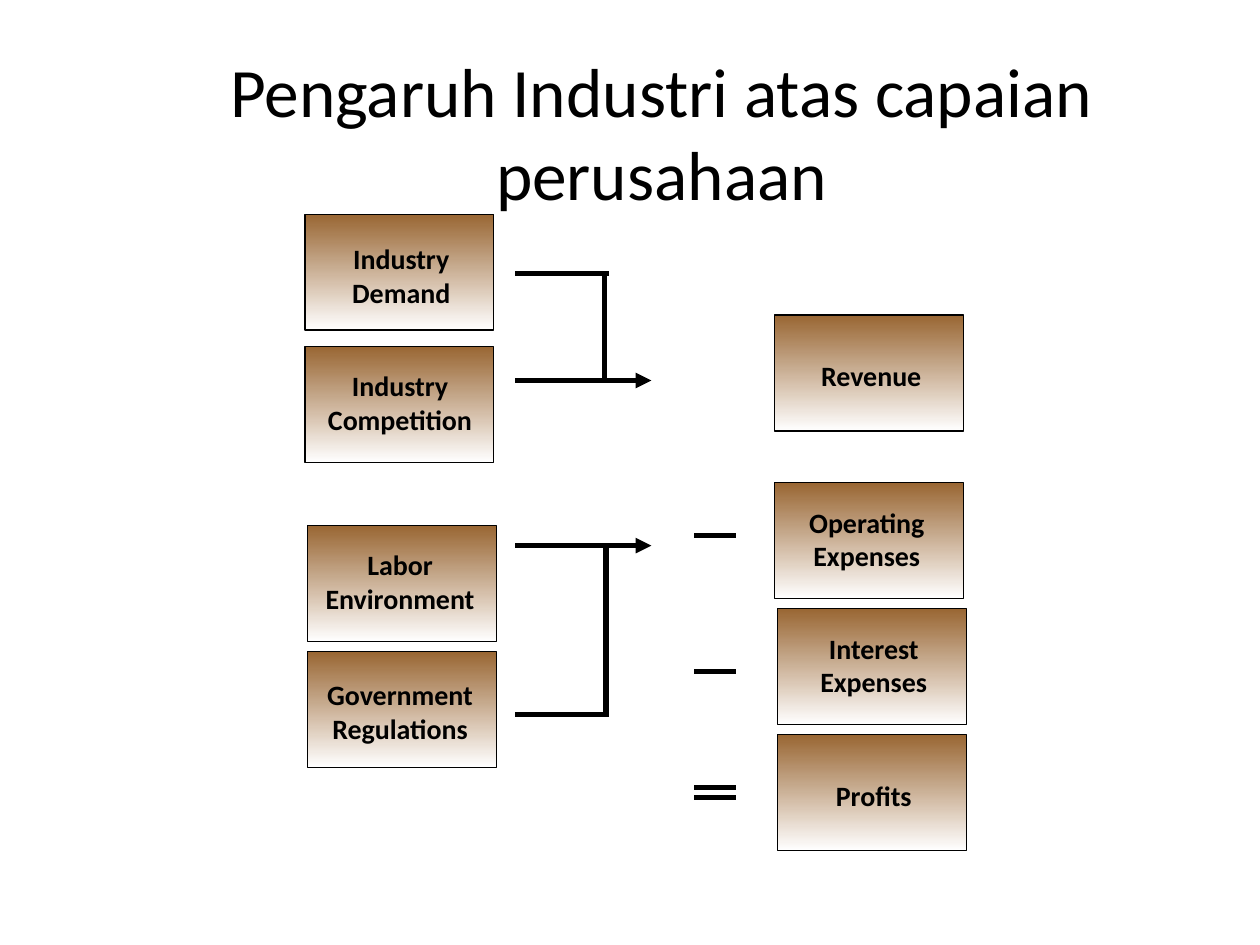
from dataclasses import dataclass

from lxml import etree
from pptx import Presentation
from pptx.dml.color import RGBColor
from pptx.enum.shapes import MSO_CONNECTOR, MSO_SHAPE
from pptx.enum.text import MSO_ANCHOR, MSO_AUTO_SIZE, PP_ALIGN
from pptx.oxml.ns import qn
from pptx.util import Inches, Pt

STRAIGHT = MSO_CONNECTOR.STRAIGHT
RECTANGLE = MSO_SHAPE.RECTANGLE
CENTER = PP_ALIGN.CENTER
MIDDLE = MSO_ANCHOR.MIDDLE
FIXED_SIZE = MSO_AUTO_SIZE.NONE
GROW_SHAPE = MSO_AUTO_SIZE.SHAPE_TO_FIT_TEXT


@dataclass(frozen=True)
class Theme:
    font: str = "Calibri"
    ink: RGBColor = RGBColor(0x00, 0x00, 0x00)
    gradient: tuple = (RGBColor(0x99, 0x66, 0x33), RGBColor(0xFF, 0xFF, 0xFF))
    title_size: float = 39.6
    label_size: float = 16
    outline_width: float = 0.75
    line_width: float = 3


class SlideBuilder:
    def __init__(self, slide, theme):
        self.slide = slide
        self.theme = theme

    def set_text(self, text_frame, text, size, bold=False):
        text_frame.word_wrap = True
        text_frame.text = text
        paragraph = text_frame.paragraphs[0]
        paragraph.alignment = CENTER
        paragraph.space_before = Pt(0)
        paragraph.font.name = self.theme.font
        paragraph.font.size = Pt(size)
        paragraph.font.bold = bold
        paragraph.font.color.rgb = self.theme.ink

    def title(self, text, left, top, width, height):
        shape = self.slide.shapes.title
        shape.left, shape.top = Inches(left), Inches(top)
        shape.width, shape.height = Inches(width), Inches(height)
        shape.text_frame.vertical_anchor = MIDDLE
        self.set_text(shape.text_frame, text, self.theme.title_size)
        shape.text_frame.auto_size = FIXED_SIZE

    def box(self, left, top, width, height):
        shape = self.slide.shapes.add_shape(
            RECTANGLE, Inches(left), Inches(top), Inches(width), Inches(height))
        shape.shadow.inherit = False
        shape.fill.gradient()
        shape.fill.gradient_angle = 270  # counter-clockwise: runs top to bottom
        for stop, color in zip(shape.fill.gradient_stops, self.theme.gradient):
            stop.color.rgb = color
        shape.line.color.rgb = self.theme.ink
        shape.line.width = Pt(self.theme.outline_width)

    def label(self, text, left, top, width, height):
        shape = self.slide.shapes.add_textbox(
            Inches(left), Inches(top), Inches(width), Inches(height))
        self.set_text(shape.text_frame, text, self.theme.label_size, bold=True)
        shape.text_frame.auto_size = GROW_SHAPE

    def line(self, start_x, start_y, end_x, end_y, arrow=False):
        connector = self.slide.shapes.add_connector(
            STRAIGHT, Inches(start_x), Inches(start_y), Inches(end_x), Inches(end_y))
        connector.line.color.rgb = self.theme.ink
        connector.line.width = Pt(self.theme.line_width)
        properties = connector._element.spPr
        if arrow:
            etree.SubElement(properties.find(qn("a:ln")), qn("a:tailEnd"), type="triangle")
        etree.SubElement(properties, qn("a:effectLst"))


BOX_WIDTH, BOX_HEIGHT = 1.5, 0.92
ONE_LINE, TWO_LINES = 0.37, 0.64

# Box left and top, then label text, left, top, width and height
FACTORS = [
    (2.42, 1.7, "Industry Demand", 2.6, 1.87, 1.17, TWO_LINES),
    (2.44, 4.17, "Labor Environment", 2.44, 4.3, 1.47, TWO_LINES),
    (2.42, 2.75, "Industry Competition", 2.42, 2.88, 1.51, TWO_LINES),
    (2.44, 5.17, "Government Regulations", 2.44, 5.33, 1.47, TWO_LINES),
]
RESULTS = [
    (6.15, 2.5, "Revenue", 6.33, 2.8, 1.17, ONE_LINE),
    (6.17, 4.83, "Interest Expenses", 6.35, 4.96, 1.17, TWO_LINES),
    (6.15, 3.83, "Operating Expenses", 6.26, 3.96, 1.24, TWO_LINES),
    (6.17, 5.83, "Profits", 6.35, 6.13, 1.17, ONE_LINE),
]

BRANCH_LEFT, BRANCH_RIGHT, ARROW_RIGHT = 4.09, 4.83, 5.17
# Height of the plain branch, height of the arrow, x of the line joining them
BRACKETS = [(2.17, 3.02, 4.8), (5.67, 4.33, 4.81)]

SIGN_LEFT, SIGN_RIGHT = 5.51, 5.84
SIGN_STROKES = [4.25, 5.33, 6.25, 6.33]  # minus, minus, equals


def main():
    presentation = Presentation()
    presentation.slide_width = Inches(10)
    presentation.slide_height = Inches(7.5)
    title_only = presentation.slide_layouts[5]
    builder = SlideBuilder(presentation.slides.add_slide(title_only), Theme())

    builder.title("Pengaruh Industri atas capaian perusahaan", 1, 0.42, 8.5, 1.25)
    for left, top, *label in FACTORS + RESULTS:
        builder.box(left, top, BOX_WIDTH, BOX_HEIGHT)
        builder.label(*label)
    for branch_y, arrow_y, join_x in BRACKETS:
        builder.line(BRANCH_LEFT, branch_y, BRANCH_RIGHT, branch_y)
        builder.line(BRANCH_LEFT, arrow_y, ARROW_RIGHT, arrow_y, arrow=True)
        builder.line(join_x, branch_y, join_x, arrow_y)
    for stroke_y in SIGN_STROKES:
        builder.line(SIGN_RIGHT, stroke_y, SIGN_LEFT, stroke_y)

    presentation.save("out.pptx")


if __name__ == "__main__":
    main()
